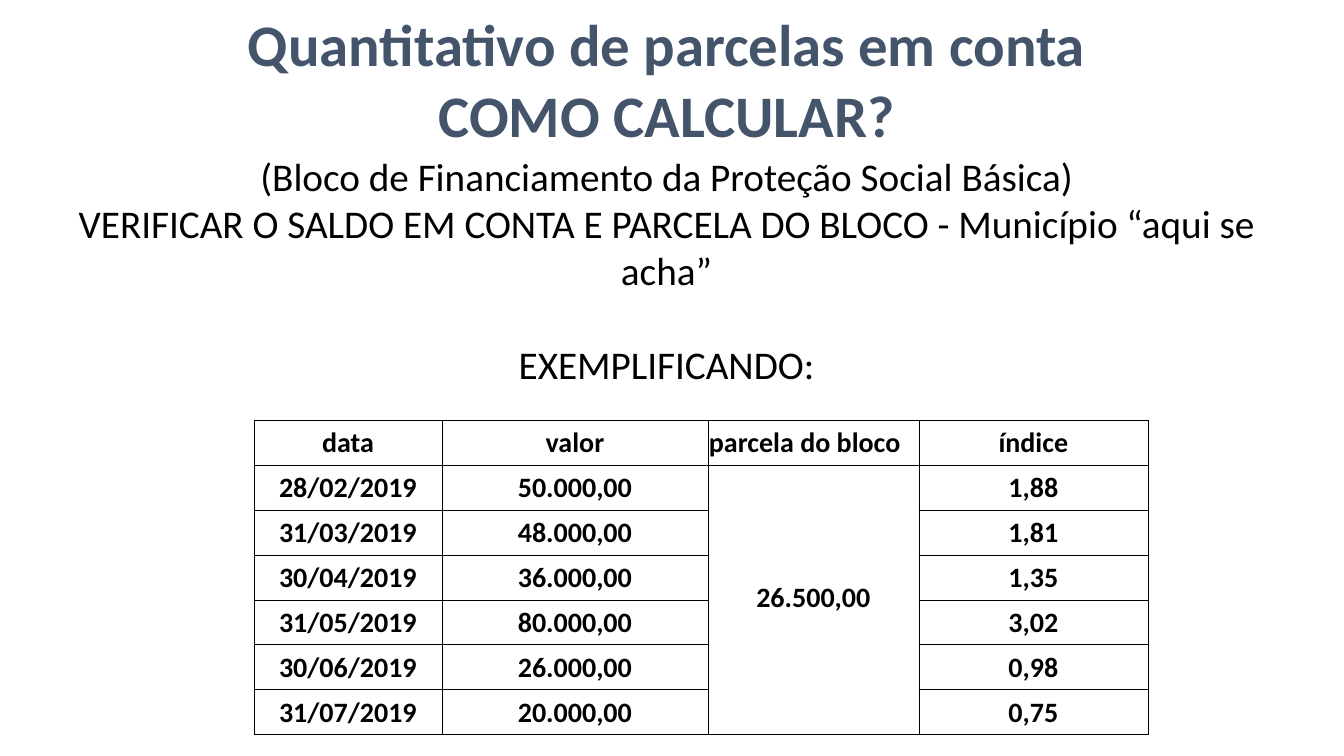
import pptx
import pptx.dml.color
import pptx.enum.text
import pptx.oxml
import pptx.oxml.ns
import pptx.util
from dataclasses import dataclass

# Content
TITLE_LINES = ["Quantitativo de parcelas em conta", "COMO CALCULAR?"]
BODY_LINES = [
    "(Bloco de Financiamento da Proteção Social Básica)",
    "VERIFICAR O SALDO EM CONTA E PARCELA DO BLOCO - Município “aqui se acha”",
    "EXEMPLIFICANDO:",
]
HEADERS = ["data", "valor", "parcela do bloco", "índice"]
INSTALLMENT = "26.500,00"
BALANCES = [
    ("28/02/2019", "50.000,00", "1,88"),
    ("31/03/2019", "48.000,00", "1,81"),
    ("30/04/2019", "36.000,00", "1,35"),
    ("31/05/2019", "80.000,00", "3,02"),
    ("30/06/2019", "26.000,00", "0,98"),
    ("31/07/2019", "20.000,00", "0,75"),
]

# Layout in px: left, top, width, height
SLIDE_SIZE = (1344, 756)
TITLE_BOX = (28, 8, 1277, 144)
BODY_BOX = (28, 152, 1277, 240)
TABLE_ORIGIN = (254, 420)
COLUMN_WIDTHS = [188, 266, 211, 229]
ROW_HEIGHT = 45
INSTALLMENT_COLUMN = 2


@dataclass(frozen=True)
class Theme:
    font: str = "Calibri"
    title_color: str = "44546A"
    text_color: str = "000000"
    border_color: str = "000000"
    title_size: int = 42
    body_size: int = 28
    table_size: int = 20
    body_gap: int = 34
    border_width: float = 0.5


THEME = Theme()
CENTER = pptx.enum.text.PP_ALIGN.CENTER
LEFT = pptx.enum.text.PP_ALIGN.LEFT
TOP = pptx.enum.text.MSO_ANCHOR.TOP
MIDDLE = pptx.enum.text.MSO_ANCHOR.MIDDLE
BOTTOM = pptx.enum.text.MSO_ANCHOR.BOTTOM


def px(length):
    return pptx.util.Emu(round(length * 914400 / 100.8))


def write(paragraph, text, size, color, bold, alignment=CENTER):
    paragraph.alignment = alignment
    paragraph.space_before = pptx.util.Pt(0)
    run = paragraph.add_run()
    run.text = text
    run.font.name = THEME.font
    run.font.size = pptx.util.Pt(size)
    run.font.bold = bold
    run.font.color.rgb = pptx.dml.color.RGBColor.from_string(color)


def fill_placeholder(shape, box, lines, size, color, bold):
    shape.left, shape.top, shape.width, shape.height = map(px, box)
    frame = shape.text_frame
    frame.word_wrap = True
    frame.auto_size = pptx.enum.text.MSO_AUTO_SIZE.NONE
    frame.vertical_anchor = TOP
    frame.margin_top = frame.margin_bottom = 0
    frame.margin_left = frame.margin_right = px(10)
    for index, line in enumerate(lines):
        paragraph = frame.add_paragraph() if index else frame.paragraphs[0]
        write(paragraph, line, size, color, bold)
        # Remove the list bullet and its indent
        properties = paragraph._p.get_or_add_pPr()
        properties.set("marL", "0")
        properties.set("indent", "0")
        properties.append(pptx.oxml.parse_xml(
            f'<a:buNone {pptx.oxml.ns.nsdecls("a")}/>'))


def add_borders(cell):
    width = pptx.util.Pt(THEME.border_width)
    properties = cell._tc.get_or_add_tcPr()
    for index, side in enumerate(("lnL", "lnR", "lnT", "lnB")):
        properties.insert(index, pptx.oxml.parse_xml(
            f'<a:{side} {pptx.oxml.ns.nsdecls("a")} w="{width}"><a:solidFill>'
            f'<a:srgbClr val="{THEME.border_color}"/></a:solidFill></a:{side}>'))


def add_balance_table(slide):
    rows = [HEADERS]
    for index, (date, value, ratio) in enumerate(BALANCES):
        rows.append([date, value, "" if index else INSTALLMENT, ratio])
    table = slide.shapes.add_table(
        len(rows), len(HEADERS), *map(px, TABLE_ORIGIN),
        px(sum(COLUMN_WIDTHS)), px(ROW_HEIGHT * len(rows))).table
    table.first_row = table.horz_banding = False
    for column, width in zip(table.columns, COLUMN_WIDTHS):
        column.width = px(width)
    for row_index, values in enumerate(rows):
        table.rows[row_index].height = px(ROW_HEIGHT)
        for column_index, text in enumerate(values):
            cell = table.cell(row_index, column_index)
            in_installment = column_index == INSTALLMENT_COLUMN
            cell.fill.background()
            add_borders(cell)
            cell.margin_left = cell.margin_right = cell.margin_top = px(1)
            cell.margin_bottom = px(5)
            cell.vertical_anchor = MIDDLE if in_installment and row_index else BOTTOM
            if text:
                alignment = LEFT if in_installment and not row_index else CENTER
                write(cell.text_frame.paragraphs[0], text, THEME.table_size,
                      THEME.text_color, True, alignment)
    # One installment value spans every date
    table.cell(1, INSTALLMENT_COLUMN).merge(
        table.cell(len(BALANCES), INSTALLMENT_COLUMN))


def main():
    presentation = pptx.Presentation()
    presentation.slide_width, presentation.slide_height = map(px, SLIDE_SIZE)
    slide = presentation.slides.add_slide(presentation.slide_layouts[1])

    # Heading and explanation
    fill_placeholder(slide.shapes.title, TITLE_BOX, TITLE_LINES,
                     THEME.title_size, THEME.title_color, True)
    body = slide.placeholders[1]
    fill_placeholder(body, BODY_BOX, BODY_LINES,
                     THEME.body_size, THEME.text_color, False)
    body.text_frame.paragraphs[-1].space_before = pptx.util.Pt(THEME.body_gap)

    # Worked example
    add_balance_table(slide)
    presentation.save("out.pptx")


if __name__ == "__main__":
    main()
